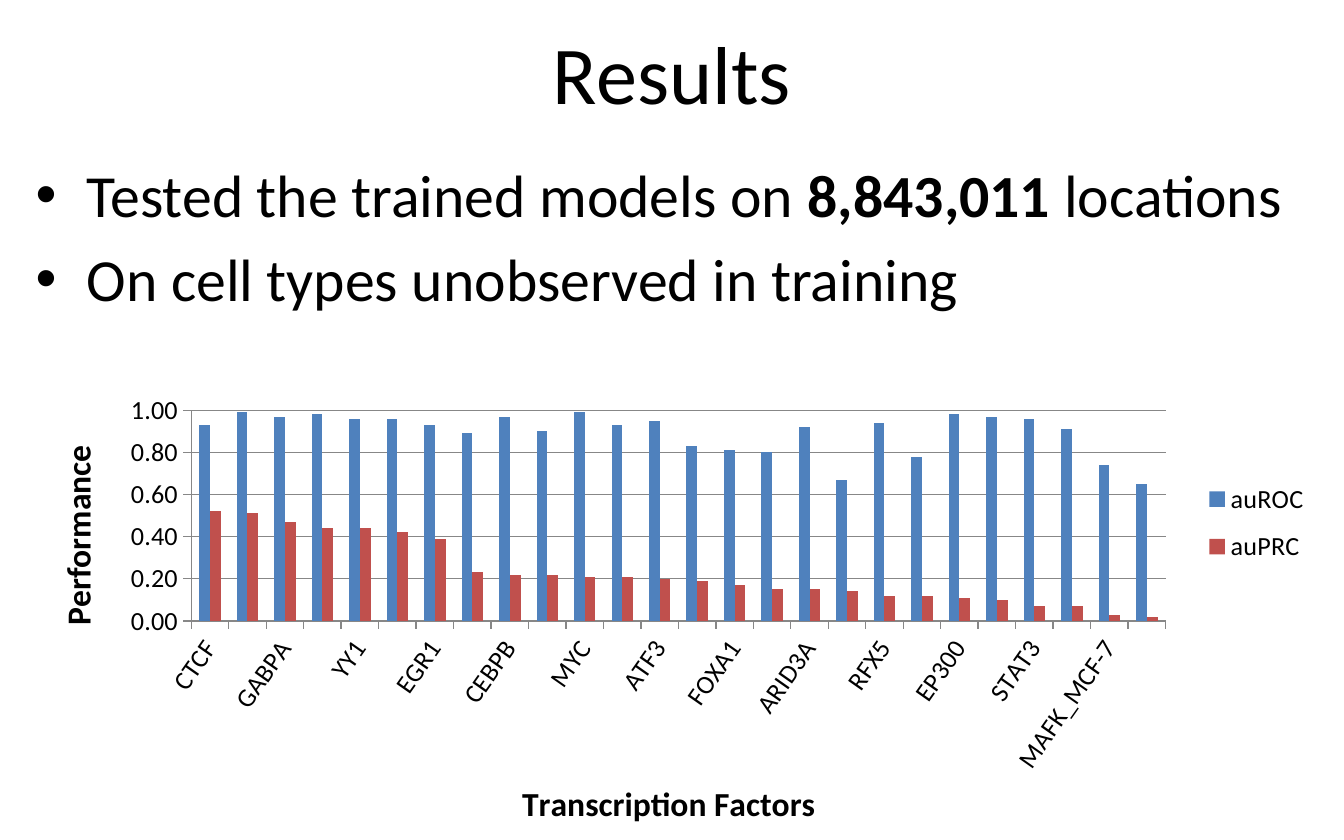
from lxml import etree
from pptx import Presentation
from pptx import util as u
from pptx.chart.data import CategoryChartData
from pptx.dml.color import RGBColor
from pptx.enum import chart as ch, text
from pptx.oxml.ns import qn

TITLE = "Results"
BULLETS = [
    [("Tested the trained models on ", False), ("8,843,011", True), (" locations", False)],
    [("On cell types unobserved in training", False)],
]
AXES = {"category": "Transcription Factors", "value": "Performance"}
SERIES = ("auROC", "auPRC")
RESULTS = [
    ("CTCF", 0.93, 0.52), ("MAX", 0.99, 0.51), ("GABPA", 0.97, 0.47),
    ("TAF1", 0.98, 0.44), ("YY1", 0.96, 0.44), ("E2F6", 0.96, 0.42),
    ("EGR1", 0.93, 0.39), ("JUND", 0.89, 0.23), ("CEBPB", 0.97, 0.22),
    ("ZNF143", 0.9, 0.22), ("MYC", 0.99, 0.21), ("TCF12", 0.93, 0.21),
    ("ATF3", 0.95, 0.2), ("CREB1", 0.83, 0.19), ("FOXA1", 0.81, 0.17),
    ("ATF7", 0.8, 0.15), ("ARID3A", 0.92, 0.15), ("ATF2", 0.67, 0.14),
    ("RFX5", 0.94, 0.12), ("REST", 0.78, 0.12), ("EP300", 0.98, 0.11),
    ("TEAD4", 0.97, 0.1), ("STAT3", 0.96, 0.07), ("TCF7L2", 0.91, 0.07),
    ("MAFK_MCF-7", 0.74, 0.03), ("MAFK_K562", 0.65, 0.02),
]
THEME = {
    "font": "Calibri", "ink": "000000", "grid": "878787",
    "series": ("4F81BD", "C0504D"),
    "title": 44, "body": 32, "axis_title": 18, "label": 14,
}
W, H = 10, 6.25
MARGIN = W / 60
BOXES = {
    "title": (W * 0.05, H * 0.02, W * 0.9, H * 0.13),
    "body": (MARGIN, H * 0.18, W - 2 * MARGIN, H * 0.25),
    "chart": (MARGIN, H * 0.46, W - 2 * MARGIN, H * 0.57),
}
LAYOUTS = {
    "plot": {"x": 0.13, "y": 0.05, "w": 0.75, "h": 0.44},
    "category": {"x": 0.38, "y": 0.81},
    "value": {"x": 0.02, "y": 0.11},
    "legend": {"x": 0.9, "y": 0.17, "w": 0.1, "h": 0.23},
}


def put(obj, values):
    for name, value in values.items():
        setattr(obj, name, value)


def place(name):
    return [u.Inches(v) for v in BOXES[name]]


def style(font, size, bold=False):
    put(font, {"name": THEME["font"], "size": u.Pt(size), "bold": bold})
    font.color.rgb = RGBColor.from_string(THEME["ink"])


def write(p, content, size):
    for words, bold in content:
        r = p.add_run()
        r.text = words
        style(r.font, size, bold)


def add_layout(parent, name):
    for old in parent.findall(qn("c:layout")):
        parent.remove(old)
    layout = etree.Element(qn("c:layout"))
    manual = etree.SubElement(layout, qn("c:manualLayout"))
    if name == "plot":
        etree.SubElement(manual, qn("c:layoutTarget"), val="inner")
    for side in "xy":
        etree.SubElement(manual, qn(f"c:{side}Mode"), val="edge")
    for key, share in LAYOUTS[name].items():
        etree.SubElement(manual, qn(f"c:{key}"), val=str(share))
    overlay = parent.find(qn("c:overlay"))
    if overlay is None:
        parent.insert(0, layout)
    else:
        overlay.addprevious(layout)


def add_title(s):
    sp = s.shapes.title
    put(sp, dict(zip(("left", "top", "width", "height"), place("title"))))
    tf = sp.text_frame
    tf.vertical_anchor = text.MSO_ANCHOR.MIDDLE
    p = tf.paragraphs[0]
    p.alignment = text.PP_ALIGN.CENTER
    write(p, [(TITLE, False)], THEME["title"])


def add_bullets(s):
    tf = s.shapes.add_textbox(*place("body")).text_frame
    tf.word_wrap = True
    for i, content in enumerate(BULLETS):
        p = tf.add_paragraph() if i else tf.paragraphs[0]
        p.space_before = u.Pt(THEME["body"] * 0.2)
        write(p, content, THEME["body"])
        pPr = p._p.get_or_add_pPr()
        indent = u.Inches(0.38)
        pPr.set("marL", str(indent))
        pPr.set("indent", str(-indent))
        etree.SubElement(pPr, qn("a:buFont"), typeface="Arial")
        etree.SubElement(pPr, qn("a:buChar"), char="•")


def format_axis(axis, name):
    put(axis, {"has_title": True, "major_tick_mark": ch.XL_TICK_MARK.OUTSIDE})
    style(axis.tick_labels.font, THEME["label"])
    axis.format.line.color.rgb = RGBColor.from_string(THEME["grid"])
    write(axis.axis_title.text_frame.paragraphs[0], [(AXES[name], True)], THEME["axis_title"])
    add_layout(axis.axis_title._element, name)


def add_results(s):
    data = CategoryChartData(number_format="0.00")
    names, *columns = zip(*RESULTS)
    data.categories = names
    for name, values in zip(SERIES, columns):
        data.add_series(name, values)
    kind = ch.XL_CHART_TYPE.COLUMN_CLUSTERED
    chart = s.shapes.add_chart(kind, *place("chart"), data).chart
    put(chart, {"has_title": False, "has_legend": True})
    style(chart.font, THEME["label"])

    plot = chart.plots[0]
    put(plot, {"gap_width": 150, "overlap": 0, "vary_by_categories": False})
    for series, color in zip(plot.series, THEME["series"]):
        series.format.fill.solid()
        series.format.fill.fore_color.rgb = RGBColor.from_string(color)

    cat, val = chart.category_axis, chart.value_axis
    format_axis(cat, "category")
    format_axis(val, "value")
    put(val, {"minimum_scale": 0, "maximum_scale": 1, "major_unit": 0.2,
              "has_major_gridlines": True})
    val.major_gridlines.format.line.color.rgb = RGBColor.from_string(THEME["grid"])
    put(val.tick_labels, {"number_format": "0.00", "number_format_is_linked": False})
    cat._element.find(qn("c:txPr")).find(qn("a:bodyPr")).set("rot", str(-55 * 60000))
    skip = etree.Element(qn("c:tickLblSkip"), val="2")
    cat._element.find(qn("c:noMultiLvlLbl")).addprevious(skip)

    legend = chart.legend
    put(legend, {"position": ch.XL_LEGEND_POSITION.RIGHT, "include_in_layout": False})
    style(legend.font, THEME["label"])
    add_layout(legend._element, "legend")
    add_layout(chart._chartSpace.chart.plotArea, "plot")


def main():
    prs = Presentation()
    put(prs, {"slide_width": u.Inches(W), "slide_height": u.Inches(H)})
    s = prs.slides.add_slide(prs.slide_layouts[5])
    add_title(s)
    add_bullets(s)
    add_results(s)
    prs.save("out.pptx")


if __name__ == "__main__":
    main()
